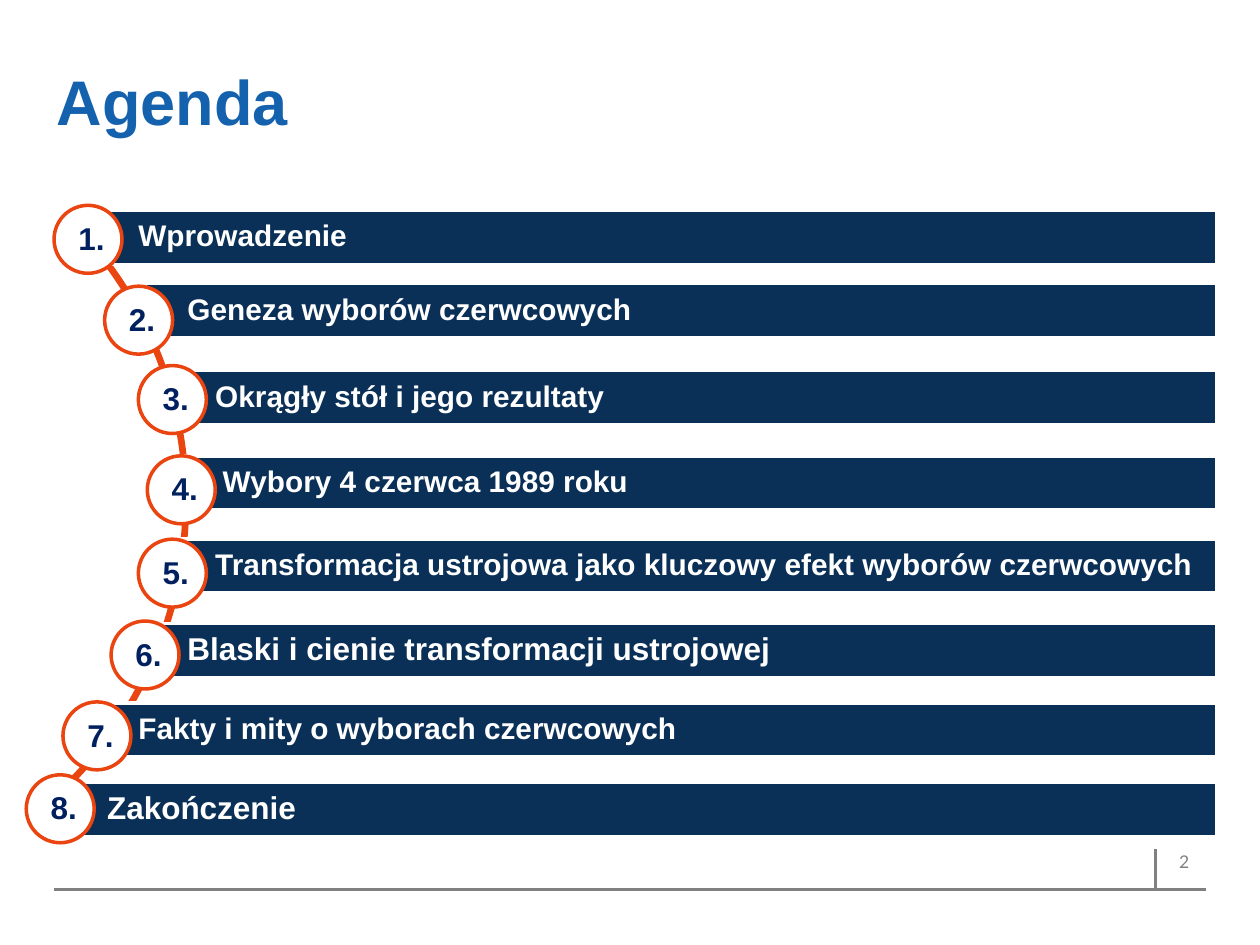
import pptx
import pptx.util
import pptx.dml.color
import pptx.enum.shapes
import pptx.enum.text
import pptx.oxml
import pptx.oxml.ns

Cm = pptx.util.Cm
Pt = pptx.util.Pt
SHAPE = pptx.enum.shapes.MSO_SHAPE
ANCHOR = pptx.enum.text.MSO_ANCHOR

COLORS = {
    "title": "1461AE",
    "bar": "0A3057",
    "ring": "EA4410",
    "digit": "002060",
    "white": "FFFFFF",
    "gray": "808080",
}
RIGHT, BAR, RING = 24.54, 1.09, 1.37

# text, text size, text indent, bar left and top, ring left and top
ITEMS = [
    ("Wprowadzenie", 17, 0.86, 1.93, 4.24, 1.09, 4.14),
    ("Geneza wyborów czerwcowych", 17, 0.86, 2.92, 5.72, 2.11, 5.77),
    ("Okrągły stół i jego rezultaty", 17, 0.86, 3.48, 7.47, 2.79, 7.37),
    ("Wybory 4 czerwca 1989 roku", 17, 0.86, 3.63, 9.19, 2.97, 9.19),
    ("Transformacja ustrojowa jako kluczowy efekt wyborów czerwcowych",
     17, 0.86, 3.48, 10.87, 2.79, 10.87),
    ("Blaski i cienie transformacji ustrojowej",
     18, 0.86, 2.92, 12.57, 2.24, 12.52),
    ("Fakty i mity o wyborach czerwcowych",
     17, 0.86, 1.93, 14.17, 1.27, 14.15),
    ("Zakończenie", 18, 0.56, 1.6, 15.77, 0.53, 15.62),
]


def color(name):
    return pptx.dml.color.RGBColor.from_string(COLORS[name])


def write(frame, text, size, name, font="Arial", bold=True):
    frame.text = text
    frame.word_wrap = True
    para = frame.paragraphs[0]
    para.alignment = pptx.enum.text.PP_ALIGN.LEFT
    style = para.runs[0].font
    style.name, style.size, style.bold = font, Pt(size), bold
    style.color.rgb = color(name)


def add_text(slide, box, *style, **more):
    shape = slide.shapes.add_textbox(*map(Cm, box))
    write(shape.text_frame, *style, **more)


def add_shape(slide, kind, box, fill, line):
    shape = slide.shapes.add_shape(kind, *map(Cm, box))
    shape.shadow.inherit = False
    if fill:
        shape.fill.solid()
        shape.fill.fore_color.rgb = color(fill)
    else:
        shape.fill.background()
    shape.line.color.rgb = color(line)
    shape.line.width = Pt(2)
    return shape


def add_line(slide, *ends):
    line = slide.shapes.add_connector(
        pptx.enum.shapes.MSO_CONNECTOR.STRAIGHT, *map(Cm, ends))
    line.line.color.rgb = color("gray")
    line.line.width = Pt(2)
    props = line._element.spPr
    props.append(pptx.oxml.parse_xml(
        "<a:effectLst %s/>" % pptx.oxml.ns.nsdecls("a")))


def add_title(slide, text):
    title = slide.shapes.title
    title.left, title.top = Cm(0.89), Cm(1.12)
    title.width, title.height = Cm(23.39), Cm(1.8)
    write(title.text_frame, text, 36, "title")
    title.text_frame.vertical_anchor = ANCHOR.MIDDLE


def add_arc(slide):
    """Draw the thin curve that links the numbered rings."""
    arc = add_shape(slide, SHAPE.BLOCK_ARC,
                    (-12.37, 2.03, 16.15, 16.15), None, "ring")
    for i, value in enumerate((189, 27, 0.004)):
        arc.adjustments[i] = value


def add_bar(slide, left, top, text, size, indent):
    bar = add_shape(slide, SHAPE.RECTANGLE,
                    (left, top, RIGHT - left, BAR), "bar", "white")
    frame = bar.text_frame
    write(frame, text, size, "white")
    frame.margin_left = Cm(indent)
    frame.margin_top = frame.margin_right = frame.margin_bottom = Cm(0.13)
    frame.vertical_anchor = ANCHOR.MIDDLE
    frame.paragraphs[0].line_spacing = 0.9


def add_ring(slide, left, top, number):
    add_shape(slide, SHAPE.OVAL, (left, top, RING, RING), "white", "ring")
    add_text(slide, (left + 0.24, top + 0.15, 2.39, 1.02),
             f"{number}.", 18, "digit")


def main():
    deck = pptx.Presentation()
    deck.slide_width, deck.slide_height = Cm(25.4), Cm(19.05)
    slide = deck.slides.add_slide(deck.slide_layouts[5])
    add_line(slide, 24.31, 17.93, 1.09, 17.93)
    add_line(slide, 23.29, 17.12, 23.29, 17.93)
    add_text(slide, (23.52, 17.04, 1.6, 1.27), "2", 10, "gray",
             font="Lato", bold=False)
    add_title(slide, "Agenda")
    add_arc(slide)
    for number, item in enumerate(ITEMS, 1):
        text, size, indent, left, top, x, y = item
        add_bar(slide, left, top, text, size, indent)
        add_ring(slide, x, y, number)
    deck.save("out.pptx")


if __name__ == "__main__":
    main()
